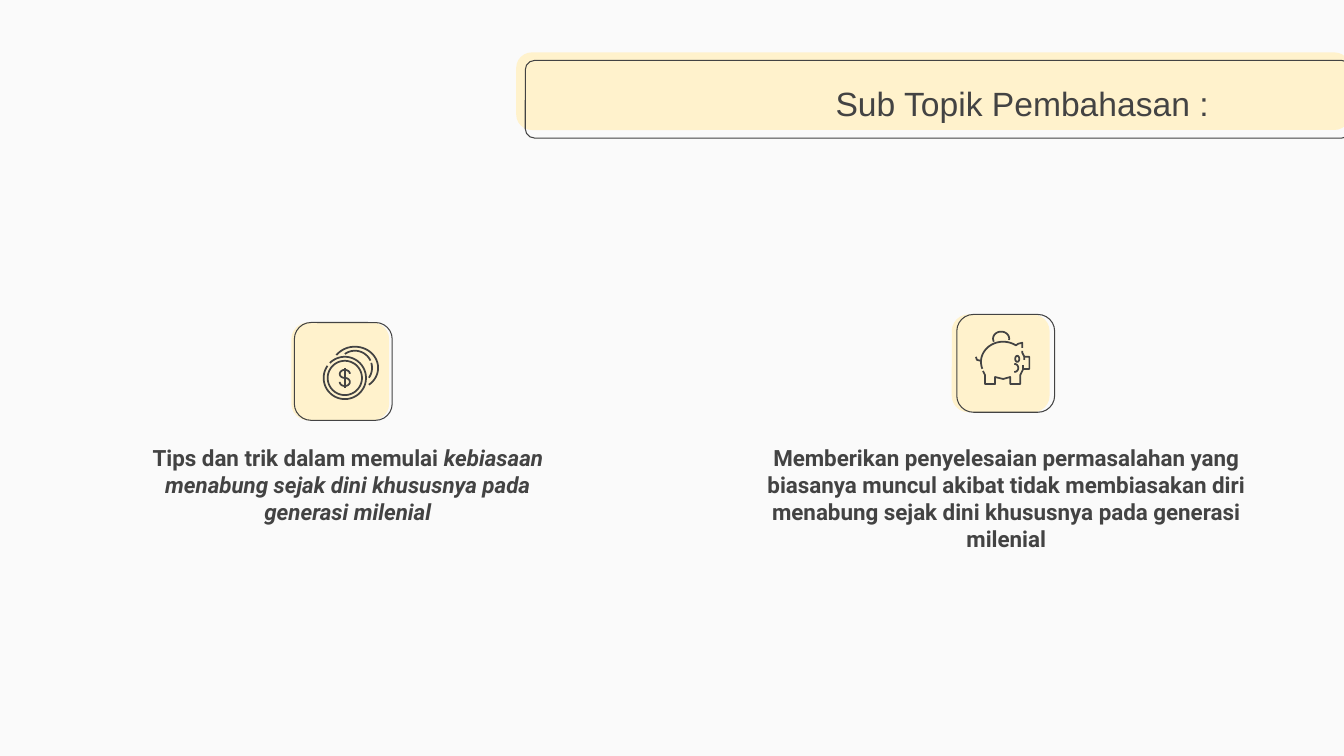
from dataclasses import dataclass
from math import cos, radians, sin

from pptx import Presentation
from pptx.dml.color import RGBColor
from pptx.enum.shapes import MSO_SHAPE
from pptx.enum.text import MSO_ANCHOR, PP_ALIGN
from pptx.util import Inches, Pt

ROUNDED = MSO_SHAPE.ROUNDED_RECTANGLE
TOP, MIDDLE = MSO_ANCHOR.TOP, MSO_ANCHOR.MIDDLE
CENTER, RIGHT = PP_ALIGN.CENTER, PP_ALIGN.RIGHT

BACKGROUND = RGBColor(0xFA, 0xFA, 0xFA)
CREAM = RGBColor(0xFF, 0xF2, 0xCC)
CHARCOAL = RGBColor(0x43, 0x43, 0x43)

TILE_SIZE = 0.97
STROKE_POINTS = 1.25

Point = tuple[float, float]
Stroke = list[Point]


@dataclass
class Box:
    left: float
    top: float
    width: float
    height: float

    def lengths(self) -> list[int]:
        return [Inches(v) for v in (self.left, self.top, self.width, self.height)]


@dataclass
class Run:
    text: str
    italic: bool = False


@dataclass
class TextBlock:
    box: Box
    runs: list[Run]
    size: int
    font: str
    bold: bool
    alignment: PP_ALIGN
    anchor: MSO_ANCHOR


@dataclass
class Topic:
    cream_left: float
    outline_left: float
    tile_top: float
    icon: list[Stroke]
    text: TextBlock


def arc(x: float, y: float, radius_x: float, radius_y: float,
        start: int, end: int) -> Stroke:
    """Points along an elliptical arc; angles run clockwise from the right."""
    steps = max(8, abs(end - start) // 6)
    angles = [radians(start + (end - start) * i / steps) for i in range(steps + 1)]
    return [(x + radius_x * cos(a), y + radius_y * sin(a)) for a in angles]


def add_rounded(slide, box: Box, corner: float, filled: bool) -> None:
    shape = slide.shapes.add_shape(ROUNDED, *box.lengths())
    shape.shadow.inherit = False
    shape.adjustments[0] = corner
    if filled:
        shape.fill.solid()
        shape.fill.fore_color.rgb = CREAM
        shape.line.fill.background()
    else:
        shape.fill.background()
        shape.line.color.rgb = CHARCOAL
        shape.line.width = Pt(0.75)


def add_icon(slide, strokes: list[Stroke]) -> None:
    """Draw all strokes of an icon as one open outline."""
    points = [[(Inches(x), Inches(y)) for x, y in stroke] for stroke in strokes]
    builder = slide.shapes.build_freeform(*points[0][0])
    builder.add_line_segments(points[0][1:], close=False)
    for stroke in points[1:]:
        builder.move_to(*stroke[0])
        builder.add_line_segments(stroke[1:], close=False)
    shape = builder.convert_to_shape()
    shape.shadow.inherit = False
    shape.fill.background()
    shape.line.color.rgb = CHARCOAL
    shape.line.width = Pt(STROKE_POINTS)


def add_text(slide, block: TextBlock) -> None:
    frame = slide.shapes.add_textbox(*block.box.lengths()).text_frame
    frame.word_wrap = True
    frame.vertical_anchor = block.anchor
    frame.margin_left = frame.margin_right = Inches(0.13)
    frame.margin_top = frame.margin_bottom = Inches(0.13)
    paragraph = frame.paragraphs[0]
    paragraph.alignment = block.alignment
    for item in block.runs:
        run = paragraph.add_run()
        run.text = item.text
        run.font.name = block.font
        run.font.size = Pt(block.size)
        run.font.bold = block.bold
        run.font.italic = item.italic
        run.font.color.rgb = CHARCOAL


def topic_text(left: float, width: float, runs: list[Run]) -> TextBlock:
    return TextBlock(Box(left, 4.28, width, 1.22), runs, 16, "Roboto", True, CENTER, TOP)


COINS = [
    arc(3.42, 3.75, 0.21, 0.21, 225, 575),  # front coin
    arc(3.42, 3.75, 0.17, 0.17, 0, 360),
    arc(3.52, 3.65, 0.23, 0.21, 217, 413),  # back coin
    arc(3.52, 3.65, 0.17, 0.17, 234, 335),
    arc(3.52, 3.65, 0.17, 0.17, 343, 395),
    [(3.42, 3.65), (3.42, 3.85)],  # dollar sign
    arc(3.42, 3.71, 0.05, 0.04, 0, -270) + arc(3.42, 3.79, 0.05, 0.04, -90, 180),
]

PIGGY_BANK = [
    # back and ear
    arc(9.95, 3.59, 0.22, 0.2, 160, 305) + [(10.1, 3.41), (10.14, 3.4), (10.14, 3.45)],
    [(10.14, 3.48), (10.14, 3.5), (10.16, 3.54), (10.16, 3.57)],
    # snout, legs and belly
    [(10.16, 3.54), (10.21, 3.54), (10.21, 3.66), (10.15, 3.66), (10.12, 3.72),
     (10.12, 3.81), (10.02, 3.81), (10.02, 3.74), (9.95, 3.76), (9.87, 3.74),
     (9.87, 3.81), (9.77, 3.81), (9.77, 3.72), (9.75, 3.68)],
    [(10.15, 3.66), (10.15, 3.62)],
    [(9.68, 3.54), (9.69, 3.57), (9.73, 3.58)],  # tail
    arc(10.09, 3.56, 0.02, 0.03, 0, 360),  # eye
    arc(10.06, 3.65, 0.04, 0.04, -90, 90),  # cheek
    arc(9.93, 3.36, 0.08, 0.07, 155, 370),  # coin
]

TITLE = TextBlock(Box(7.55, 0.67, 4.66, 0.7), [Run("Sub Topik Pembahasan : ")],
                  24, "Arial", False, RIGHT, MIDDLE)

TOPICS = [
    Topic(2.89, 2.92, 3.2, COINS, topic_text(1.3, 4.3, [
        Run("Tips dan trik dalam memulai "),
        Run("kebiasaan menabung sejak dini khususnya pada generasi milenial", True),
    ])),
    Topic(9.44, 9.49, 3.12, PIGGY_BANK, topic_text(7.24, 5.48, [
        Run("Memberikan penyelesaian permasalahan yang biasanya muncul akibat tidak "
            "membiasakan diri menabung sejak dini khususnya pada generasi milenial"),
    ])),
]


def main() -> None:
    presentation = Presentation()
    presentation.slide_width = Inches(13.33)
    presentation.slide_height = Inches(7.5)
    slide = presentation.slides.add_slide(presentation.slide_layouts[6])
    slide.background.fill.solid()
    slide.background.fill.fore_color.rgb = BACKGROUND

    # Title banner
    add_rounded(slide, Box(5.12, 0.52, 8.27, 0.77), 0.2, filled=True)
    add_rounded(slide, Box(5.21, 0.6, 8.19, 0.77), 0.12, filled=False)
    add_text(slide, TITLE)

    # Topics: tile, icon and description
    for topic in TOPICS:
        for left, filled in ((topic.cream_left, True), (topic.outline_left, False)):
            add_rounded(slide, Box(left, topic.tile_top, TILE_SIZE, TILE_SIZE), 0.17, filled)
        add_icon(slide, topic.icon)
        add_text(slide, topic.text)

    presentation.save("out.pptx")


if __name__ == "__main__":
    main()
